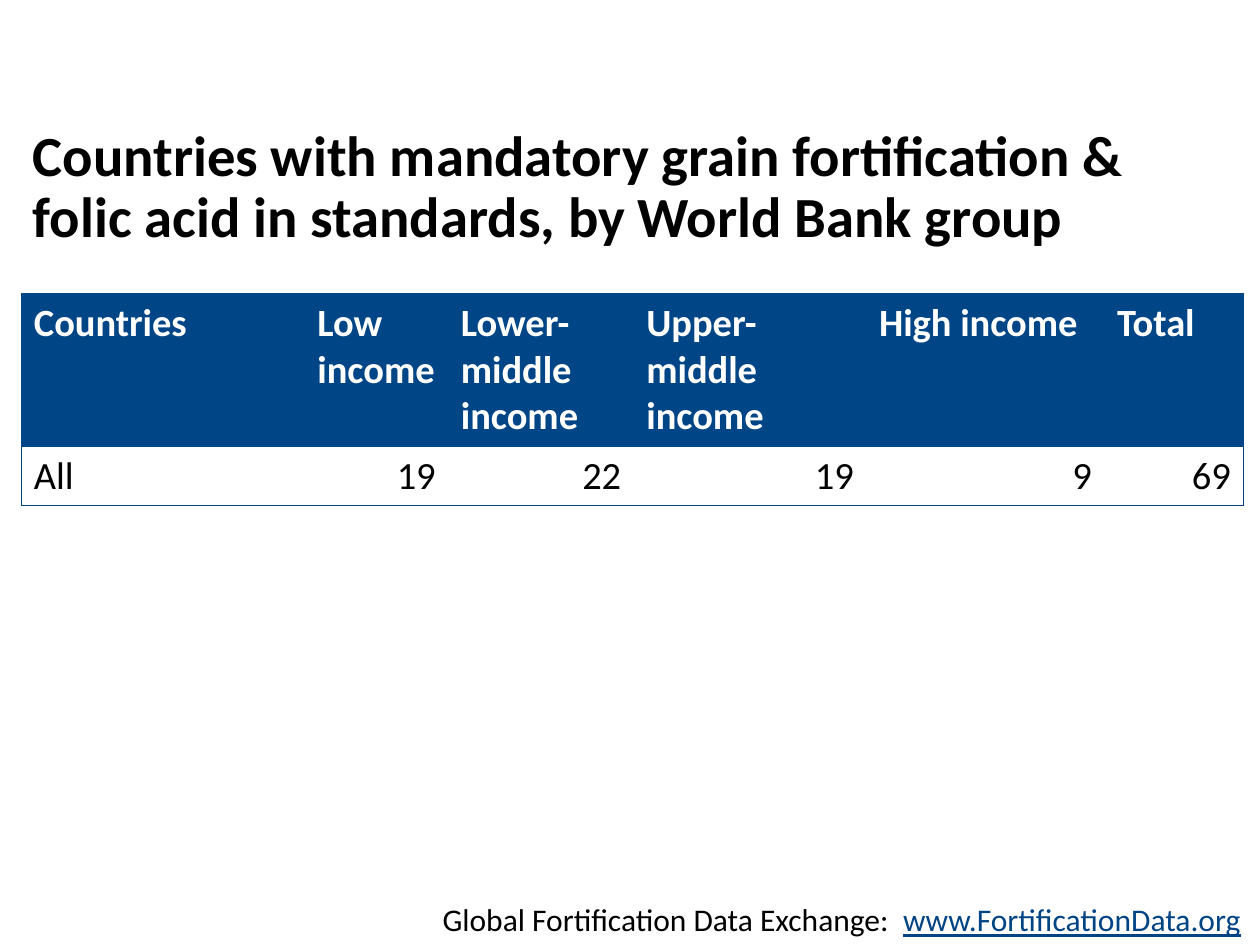
from dataclasses import dataclass

from lxml import etree
from pptx import Presentation
from pptx.dml.color import RGBColor
from pptx.enum.text import MSO_ANCHOR, PP_ALIGN
from pptx.oxml.ns import qn
from pptx.util import Pt

LEFT, RIGHT = PP_ALIGN.LEFT, PP_ALIGN.RIGHT
MIDDLE = MSO_ANCHOR.MIDDLE
TITLE_ONLY = 5

TITLE = ("Countries with mandatory grain fortification & "
         "folic acid in standards, by World Bank group")
ROWS = [
    ["Countries", "Low income", "Lower-middle income",
     "Upper-middle income", "High income", "Total"],
    ["All", "19", "22", "19", "9", "69"],
]
COLUMN_WIDTHS = [162, 82, 106, 133, 136, 79.4]
ROW_HEIGHTS = [87.4, 32.8]


@dataclass(frozen=True)
class Theme:
    font: str = "Calibri"
    text: str = "000000"
    header_text: str = "FFFFFF"
    header_fill: str = "004585"
    body_fill: str = "FFFFFF"
    border: str = "004585"
    link: str = "004484"
    title_size: float = 32.4
    table_size: float = 22
    source_size: float = 18
    border_width: float = 0.5


class SlideBuilder:
    def __init__(self, slide, theme):
        self.slide = slide
        self.theme = theme

    def style(self, font, size, color, bold=False):
        font.name = self.theme.font
        font.size = Pt(size)
        font.bold = bold
        font.color.rgb = RGBColor.from_string(color)

    def title(self, text, left, top, width, height):
        title = self.slide.shapes.title
        title.left, title.top = Pt(left), Pt(top)
        title.width, title.height = Pt(width), Pt(height)
        title.text_frame.text = text
        title.text_frame.vertical_anchor = MIDDLE
        paragraph = title.text_frame.paragraphs[0]
        paragraph.alignment = LEFT
        paragraph.line_spacing = 0.9
        self.style(paragraph.font, self.theme.title_size, self.theme.text, bold=True)

    def source(self, label, address, left, top, width, height):
        box = self.slide.shapes.add_textbox(Pt(left), Pt(top), Pt(width), Pt(height))
        box.text_frame.word_wrap = True
        paragraph = box.text_frame.paragraphs[0]
        paragraph.alignment = RIGHT
        self.style(paragraph.font, self.theme.source_size, self.theme.text)
        paragraph.add_run().text = label
        link = paragraph.add_run()
        link.text = address
        link.font.underline = True
        link.font.color.rgb = RGBColor.from_string(self.theme.link)

    def table(self, rows, column_widths, row_heights, left, top):
        """Add a table with a filled header row and a thin outline around each row."""
        frame = self.slide.shapes.add_table(
            len(rows), len(column_widths), Pt(left), Pt(top),
            Pt(sum(column_widths)), Pt(sum(row_heights)))
        table = frame.table
        table.horz_banding = False
        for column, width in zip(table.columns, column_widths):
            column.width = Pt(width)
        for row, height in zip(table.rows, row_heights):
            row.height = Pt(height)
        last_column = len(column_widths) - 1
        for row_index, texts in enumerate(rows):
            for column_index, text in enumerate(texts):
                edges = {"lnL": column_index == 0, "lnR": column_index == last_column,
                         "lnT": True, "lnB": True}
                cell = table.cell(row_index, column_index)
                self.cell(cell, text, row_index == 0, column_index == 0, edges)

    def cell(self, cell, text, is_header, is_label, edges):
        theme = self.theme
        self.borders(cell, edges)
        cell.fill.solid()
        fill = theme.header_fill if is_header else theme.body_fill
        cell.fill.fore_color.rgb = RGBColor.from_string(fill)
        cell.text = text
        paragraph = cell.text_frame.paragraphs[0]
        paragraph.alignment = LEFT if is_header or is_label else RIGHT
        color = theme.header_text if is_header else theme.text
        self.style(paragraph.font, theme.table_size, color, bold=is_header)

    def borders(self, cell, edges):
        """Draw the edges marked True and hide the others."""
        properties = cell._tc.get_or_add_tcPr()
        for tag, visible in edges.items():
            width = Pt(self.theme.border_width) if visible else 0
            line = etree.SubElement(properties, qn(f"a:{tag}"), w=str(width))
            if visible:
                fill = etree.SubElement(line, qn("a:solidFill"))
                etree.SubElement(fill, qn("a:srgbClr"), val=self.theme.border)
            else:
                etree.SubElement(line, qn("a:noFill"))


def main():
    presentation = Presentation()
    presentation.slide_width, presentation.slide_height = Pt(720), Pt(540)
    slide = presentation.slides.add_slide(presentation.slide_layouts[TITLE_ONLY])
    builder = SlideBuilder(slide, Theme())
    builder.title(TITLE, left=11.5, top=68.4, width=697, height=78.5)
    builder.source("Global Fortification Data Exchange:  ", "www.FortificationData.org",
                   left=186, top=511, width=530, height=29)
    builder.table(ROWS, COLUMN_WIDTHS, ROW_HEIGHTS, left=12.2, top=167.6)
    presentation.save("out.pptx")


if __name__ == "__main__":
    main()
